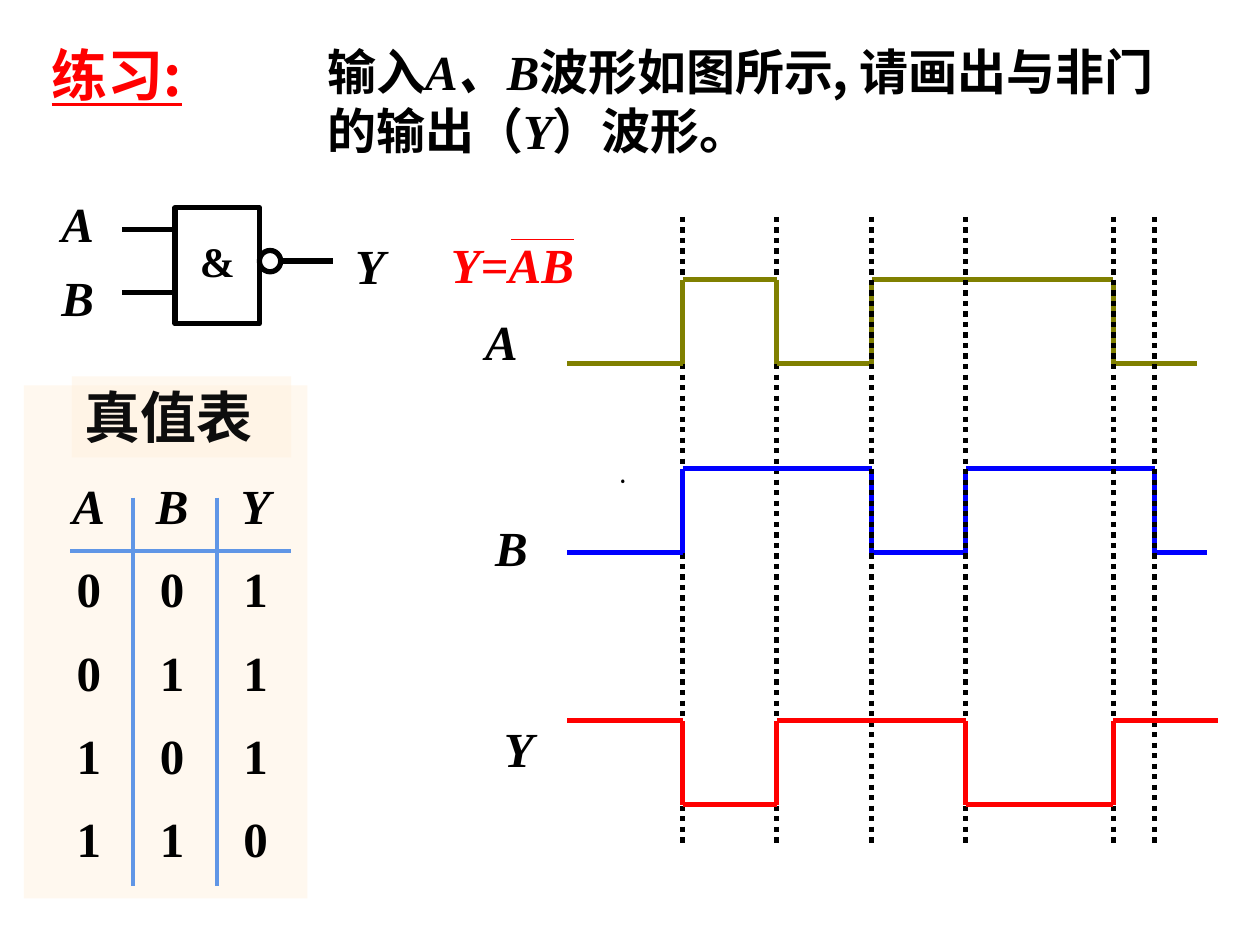
"""Build a slide with a NAND gate exercise: symbol, truth table and waveforms."""
from itertools import pairwise

from lxml import etree
from pptx import Presentation
from pptx.dml.color import RGBColor
from pptx.enum.dml import MSO_LINE
from pptx.enum.shapes import MSO_CONNECTOR, MSO_SHAPE
from pptx.enum.text import MSO_ANCHOR, PP_ALIGN
from pptx.oxml.ns import qn
from pptx.util import Cm, Pt

DOT = MSO_LINE.ROUND_DOT
RECT, OVAL = MSO_SHAPE.RECTANGLE, MSO_SHAPE.OVAL
LEFT, MID = PP_ALIGN.LEFT, PP_ALIGN.CENTER


class Theme:
    black, white, red = "000000", "FFFFFF", "FF0000"
    olive, blue, sky = "808000", "0000FF", "6096E6"
    cream, ink = "FFF1DD", "0D0D0D"
    head, body, sign, small = 32, 28, 24, 18
    thick, rule, thin = 3, 2.25, 0.75
    han, roman = "Noto Sans CJK SC", "Times New Roman"


def write(frame, parts, size=Theme.body, color=Theme.black, align=LEFT, bold=True):
    par = frame.paragraphs[0]
    par.alignment = align
    for text, kind in parts:
        run = par.add_run()
        run.text = text
        font = run.font
        font.size, font.bold, font.italic = Pt(size), bold, kind == "var"
        font.name = Theme.han if kind == "han" else Theme.roman
        font.color.rgb = RGBColor.from_string(color)
        etree.SubElement(font._element, qn("a:ea"), typeface=Theme.han)


def draw(start, end, color=Theme.black, width=Theme.thick, dash=None):
    ends = [Cm(v) for v in (*start, *end)]
    line = slide.shapes.add_connector(MSO_CONNECTOR.STRAIGHT, *ends)
    line.line.color.rgb = RGBColor.from_string(color)
    line.line.width = Pt(width)
    if dash:
        line.line.dash_style = dash
    etree.SubElement(line._element.spPr, qn("a:effectLst"))


deck = Presentation()
deck.slide_width, deck.slide_height = Cm(25.4), Cm(19.05)
slide = deck.slides.add_slide(deck.slide_layouts[6])
shapes = slide.shapes

edges = [13.76, 15.66, 17.57, 19.47, 22.44, 23.28]
top, foot, swing = 4.37, 17.07, 1.69
waves = [
    (Theme.olive, 5.64, 1, (0, 1, 2, 4), 24.13),
    (Theme.blue, 9.45, 1, (0, 2, 3, 5), 24.34),
    (Theme.red, 14.53, 0, (0, 1, 3, 4), 24.55),
]
guides = [edges[:2], [], edges[2:]]
for (color, high, low, turns, stop), marks in zip(waves, guides):
    for x in marks:
        draw((x, top), (x, foot), dash=DOT)
    points = [(11.43, high + low * swing)]
    for turn in turns:
        points.append((edges[turn], high + low * swing))
        low = 1 - low
        points.append((edges[turn], high + low * swing))
    points.append((stop, high + low * swing))
    for start, end in pairwise(points):
        draw(start, end, color)

gate = [
    (RECT, 3.53, 4.19, 1.7, 2.34),
    (OVAL, 5.23, 5.05, 0.43, 0.43),
]
for kind, *box in gate:
    part = shapes.add_shape(kind, *[Cm(v) for v in box])
    part.shadow.inherit = False
    part.fill.solid()
    part.fill.fore_color.rgb = RGBColor.from_string(Theme.white)
    part.line.color.rgb = RGBColor.from_string(Theme.black)
    part.line.width = Pt(Theme.thick)
for x, y, end in [(2.46, 4.62, 3.53), (2.46, 5.89, 3.53), (5.64, 5.26, 6.71)]:
    draw((x, y), (end, y))

panels = [
    (0.48, 7.77, 5.72, 10.34, []),
    (1.45, 7.59, 4.42, 1.63, [("真值表", "han")]),
]
for *box, parts in panels:
    panel = shapes.add_shape(RECT, *[Cm(v) for v in box])
    panel.shadow.inherit = False
    panel.fill.solid()
    panel.fill.fore_color.rgb = RGBColor.from_string(Theme.cream)
    tint = panel._element.spPr.find(".//" + qn("a:srgbClr"))
    etree.SubElement(tint, qn("a:alpha"), val="45000")
    panel.line.fill.background()
    panel.text_frame.vertical_anchor = MSO_ANCHOR.TOP
    write(panel.text_frame, parts, Theme.head, Theme.ink)

rows = ["ABY", "001", "011", "101", "110"]
step = 1.68
grid = shapes.add_table(
    5, 3, Cm(0.95), Cm(9.4), Cm(3 * step), Cm(5 * step)
).table
grid.first_row = grid.horz_banding = False
style = grid._tbl.tblPr.find(qn("a:tableStyleId"))
style.text = "{2D5ABB26-0587-4C30-8999-92F81FD0307C}"
for r, row in enumerate(rows):
    for c, mark in enumerate(row):
        cell = grid.cell(r, c)
        cell.fill.background()
        cell.vertical_anchor = MSO_ANCHOR.MIDDLE
        kind = "num" if r else "var"
        write(cell.text_frame, [(mark, kind)], align=MID)
draw((1.42, 11.1), (5.87, 11.1), Theme.sky, Theme.rule)
for x in (2.69, 4.37):
    draw((x, 10.03), (x, 17.86), Theme.sky, Theme.rule)

task = [
    ("输入", "han"), ("A、B", "var"),
    ("波形如图所示, 请画出与非门的输出", "han"),
    ("（", "num"), ("Y", "var"), ("）", "num"), ("波形。", "han"),
]
rule = [("Y", "var"), ("=", "num"), ("AB", "var")]
notes = [
    (6.35, 0.71, 17.68, 2.62, task, {}),
    (8.84, 4.6, 3.61, 1.45, rule, {"color": Theme.red}),
    (3.58, 4.62, 1.6, 1.27, [("&", "num")], {"size": Theme.sign, "align": MID}),
]
names = [
    ("A", 9.53, 6.15), ("B", 9.73, 10.31), ("Y", 9.91, 14.35),
    ("A", 0.99, 3.78), ("B", 0.99, 5.26), ("Y", 6.91, 4.62),
]
for name, x, y in names:
    notes.append((x, y, 1.5, 1.45, [(name, "var")], {}))
for *box, parts, look in notes:
    note = shapes.add_textbox(*[Cm(v) for v in box]).text_frame
    note.word_wrap = True
    write(note, parts, **look)
draw((10.31, 4.83), (11.58, 4.83), Theme.red, Theme.thin)

title = shapes.add_textbox(Cm(0.79), Cm(0.69), Cm(3.38), Cm(1.63)).text_frame
title.word_wrap = False
write(title, [("练习:\t", "han")], Theme.head, Theme.red)
title.paragraphs[0].runs[0].font.underline = True
dot = shapes.add_textbox(Cm(11.99), Cm(8.99), Cm(1.14), Cm(1.02)).text_frame
dot.word_wrap = False
write(dot, [("﹒", "han")], Theme.small, bold=False)

deck.save("out.pptx")
